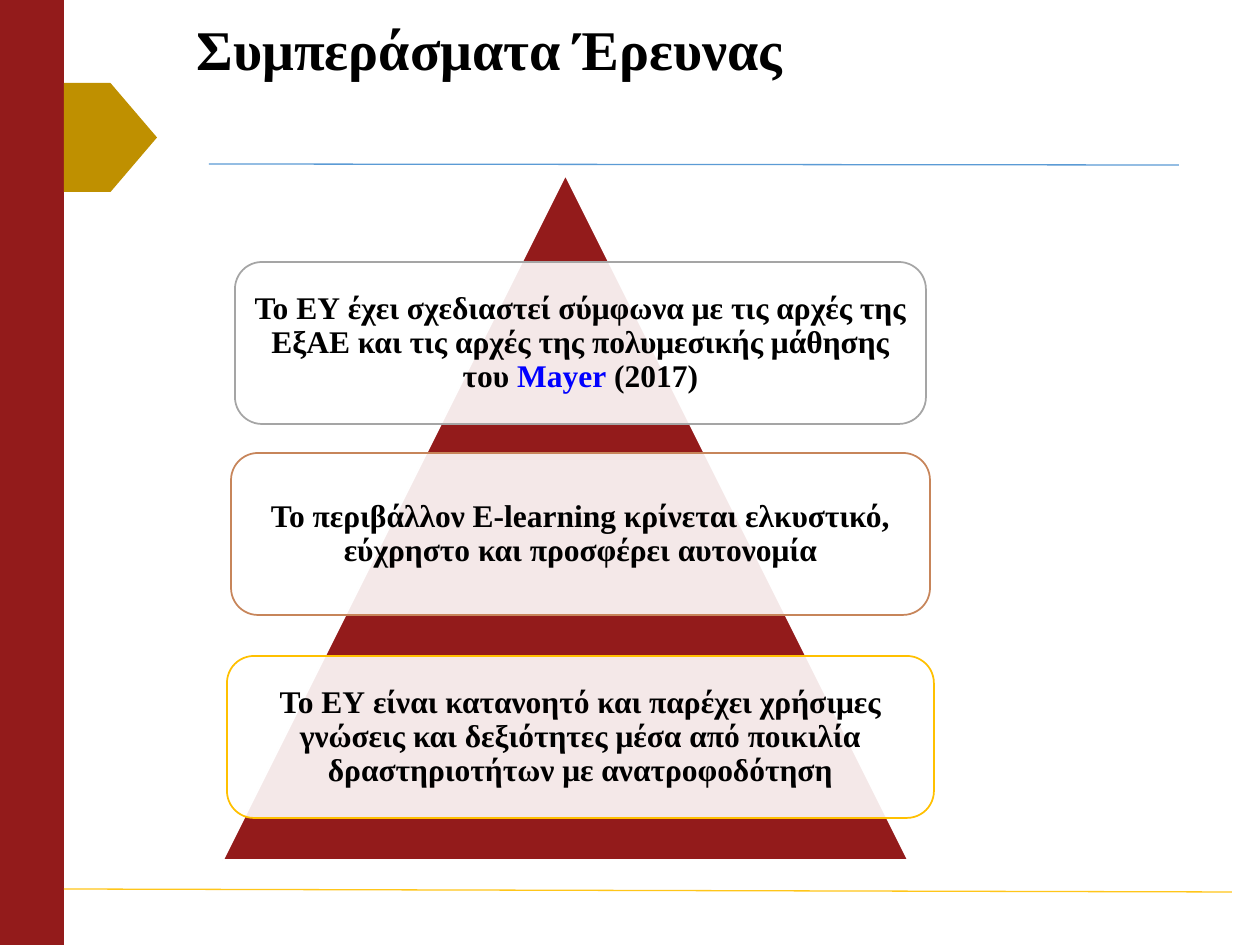
from dataclasses import dataclass

from lxml import etree
from pptx import Presentation
from pptx.dml.color import RGBColor
from pptx.enum import shapes, text
from pptx.oxml.ns import qn
from pptx.util import Emu, Pt

PX_PER_INCH = 126
FONT = "Times New Roman"

WHITE = RGBColor(0xFF, 0xFF, 0xFF)
BLACK = RGBColor(0x00, 0x00, 0x00)
CRIMSON = RGBColor(0x93, 0x1B, 0x1B)
GOLD = RGBColor(0xBF, 0x90, 0x00)
SKY = RGBColor(0x5B, 0x9B, 0xD5)
AMBER = RGBColor(0xFF, 0xC6, 0x1A)
GREY = RGBColor(0xA5, 0xA5, 0xA5)
COPPER = RGBColor(0xC7, 0x85, 0x5A)
YELLOW = RGBColor(0xFF, 0xC0, 0x00)
CITATION = RGBColor(0x00, 0x00, 0xFF)


@dataclass(frozen=True)
class Box:
    left: int
    top: int
    width: int
    height: int

    def emu(self) -> list[Emu]:
        return [px(n) for n in (self.left, self.top, self.width, self.height)]


@dataclass(frozen=True)
class Rule:
    start: tuple[int, int]
    end: tuple[int, int]
    color: RGBColor


@dataclass(frozen=True)
class Conclusion:
    box: Box
    border: RGBColor
    runs: tuple[tuple[str, RGBColor], ...]


RULES = (
    Rule((209, 164), (1179, 165), SKY),
    Rule((64, 889), (1232, 892), AMBER),
)

CONCLUSIONS = (
    Conclusion(Box(235, 262, 691, 162), GREY, (
        ("Το ΕΥ έχει σχεδιαστεί σύμφωνα με τις αρχές της ΕξΑΕ και τις "
         "αρχές της πολυμεσικής μάθησης του ", BLACK),
        ("Mayer", CITATION),
        (" (2017)", BLACK),
    )),
    Conclusion(Box(231, 453, 699, 162), COPPER, (
        ("Το περιβάλλον E-learning κρίνεται ελκυστικό, εύχρηστο και "
         "προσφέρει αυτονομία", BLACK),
    )),
    Conclusion(Box(227, 656, 707, 162), YELLOW, (
        ("Το ΕΥ είναι κατανοητό και παρέχει χρήσιμες γνώσεις και δεξιότητες "
         "μέσα από ποικιλία δραστηριοτήτων με ανατροφοδότηση", BLACK),
    )),
)


def px(count: int) -> Emu:
    return Emu(round(count * 914400 / PX_PER_INCH))


def add_solid(slide, kind, box: Box, fill: RGBColor, border: RGBColor | None = None):
    solid = slide.shapes.add_shape(kind, *box.emu())
    solid.shadow.inherit = False
    solid.fill.solid()
    solid.fill.fore_color.rgb = fill
    if border is None:
        solid.line.fill.background()
    else:
        solid.line.color.rgb = border
        solid.line.width = Pt(1)
    return solid


def add_rule(slide, rule: Rule) -> None:
    ends = [px(n) for n in (*rule.start, *rule.end)]
    line = slide.shapes.add_connector(shapes.MSO_CONNECTOR.STRAIGHT, *ends)
    line.line.color.rgb = rule.color
    line.line.width = Pt(0.75)
    etree.SubElement(line._element.spPr, qn("a:effectLst"))


def write(frame, runs, size: int, align, insets: tuple[int, int]) -> None:
    """Fill the frame with one bold paragraph; insets are horizontal, vertical."""
    across, down = (px(n) for n in insets)
    frame_format = {
        "word_wrap": True,
        "vertical_anchor": text.MSO_ANCHOR.MIDDLE,
        "margin_left": across, "margin_right": across,
        "margin_top": down, "margin_bottom": down,
    }
    for name, value in frame_format.items():
        setattr(frame, name, value)
    paragraph = frame.paragraphs[0]
    paragraph.alignment = align
    paragraph.line_spacing = 0.9
    for wording, color in runs:
        run = paragraph.add_run()
        run.text = wording
        for name, value in {"name": FONT, "size": Pt(size), "bold": True}.items():
            setattr(run.font, name, value)
        run.font.color.rgb = color


def add_conclusion(slide, conclusion: Conclusion) -> None:
    card = add_solid(slide, shapes.MSO_SHAPE.ROUNDED_RECTANGLE, conclusion.box,
                     WHITE, conclusion.border)
    tint = card._element.spPr.find(qn("a:solidFill"))[0]
    etree.SubElement(tint, qn("a:alpha"), val="90000")
    write(card.text_frame, conclusion.runs, 18, text.PP_ALIGN.CENTER, (9, 9))


def main() -> None:
    deck = Presentation()
    deck.slide_width, deck.slide_height = px(1260), px(945)
    slide = deck.slides.add_slide(deck.slide_layouts[6])

    add_solid(slide, shapes.MSO_SHAPE.RECTANGLE, Box(0, 0, 64, 945), CRIMSON)
    for rule in RULES:
        add_rule(slide, rule)
    add_solid(slide, shapes.MSO_SHAPE.PENTAGON, Box(64, 83, 93, 109), GOLD)

    title = slide.shapes.add_textbox(*Box(184, 0, 833, 104).emu())
    write(title.text_frame, (("Συμπεράσματα Έρευνας", BLACK),), 32,
          text.PP_ALIGN.LEFT, (13, 6))

    add_solid(slide, shapes.MSO_SHAPE.ISOSCELES_TRIANGLE,
              Box(223, 175, 685, 685), CRIMSON, WHITE)
    for conclusion in CONCLUSIONS:
        add_conclusion(slide, conclusion)

    deck.save("out.pptx")


if __name__ == "__main__":
    main()
